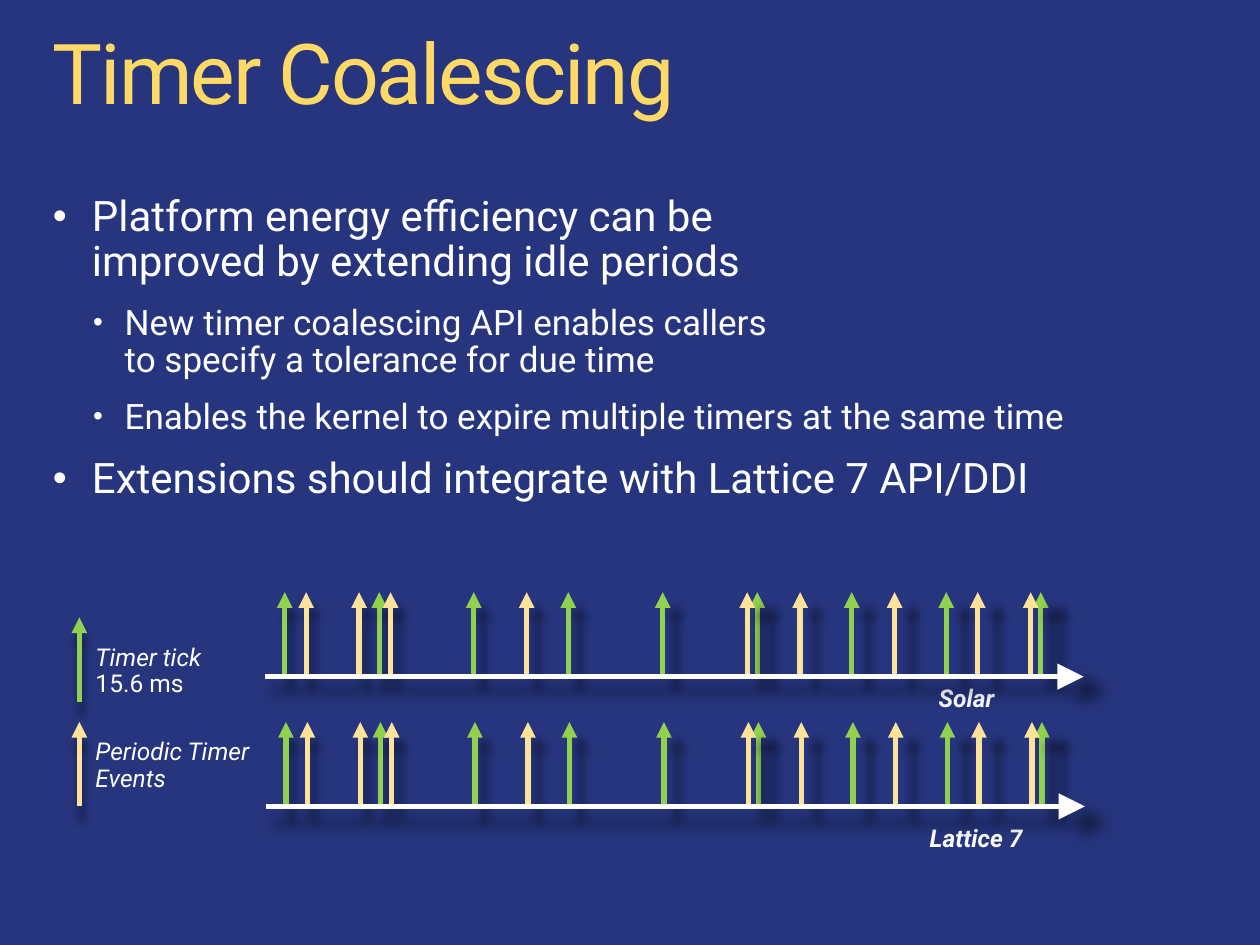
import pptx
import pptx.dml.color
import pptx.enum.shapes
import pptx.enum.text
import pptx.oxml
import pptx.oxml.ns
import pptx.util

Inches = pptx.util.Inches
COLORS = {"ground": "26357E", "title": "FFD966", "text": "FFFFFF",
          "tick": "92D050", "event": "FDE399", "shadow": "000000"}
LABEL = {"size": pptx.util.Pt(14), "italic": True}
SYSTEM = {**LABEL, "bold": True}
LEVELS = [
    {"size": 24, "margin": 0.31, "hang": 0.31, "before": 11.7, "bullet": 95},
    {"size": 20, "margin": 0.57, "hang": 0.25, "before": 10.8, "bullet": 80},
]
POINTS = [
    (0, "Platform energy efficiency can be\vimproved by extending idle periods"),
    (1, "New timer coalescing API enables callers\vto specify a tolerance for due time"),
    (1, "Enables the kernel to expire multiple timers at the same time"),
    (0, "Extensions should integrate with Lattice 7 API/DDI"),
]
AXIS_LENGTH, ARROW_HEIGHT = 6.5, 0.67
TICKS = [0.16 + 0.75 * step for step in range(9)]
EVENTS = [0.33, 0.75, 1, 2.08, 3.83, 4.25, 5, 5.66, 6.08]


def rgb(name):
    """Return the named colour."""
    return pptx.dml.color.RGBColor.from_string(COLORS[name])


def xml(markup):
    """Parse one DrawingML element."""
    tag, rest = markup[1:].split(" ", 1)
    return pptx.oxml.parse_xml(f"<{tag} {pptx.oxml.ns.nsdecls('a')} {rest}")


class TimerSlide:
    """Hold the style and the current slide."""

    def __init__(self, deck, font="Roboto"):
        self.font = font
        self.slide = deck.slides.add_slide(deck.slide_layouts[6])
        self.slide.background.fill.solid()
        self.slide.background.fill.fore_color.rgb = rgb("ground")

    def box(self, left, top, width, height, inset=True):
        """Add a wrapping text frame."""
        area = [Inches(length) for length in (left, top, width, height)]
        frame = self.slide.shapes.add_textbox(*area).text_frame
        frame.word_wrap = True
        frame.vertical_anchor = pptx.enum.text.MSO_ANCHOR.TOP
        if not inset:
            for side in ("left", "top", "right", "bottom"):
                setattr(frame, f"margin_{side}", 0)
        return frame

    def set_text(self, paragraph, text, format, color="text", spacing=0.9):
        """Fill a paragraph and format its runs."""
        paragraph.text = text
        paragraph.line_spacing = spacing
        for run in paragraph.runs:
            for key, value in {"name": self.font, **format}.items():
                setattr(run.font, key, value)
            run.font.color.rgb = rgb(color)

    def title(self, text):
        """Add the tightly spaced heading."""
        heading = self.box(0.42, 0.25, 9.16, 0.73, inset=False).paragraphs[0]
        self.set_text(heading, text, {"size": pptx.util.Pt(48)}, "title")
        heading.runs[0].font._element.set("spc", "-120")

    def bullets(self, points):
        """Add the two-level bullet list."""
        frame = self.box(0.42, 1.55, 9.16, 2.48, inset=False)
        for number, (level, text) in enumerate(points):
            look = LEVELS[level]
            point = frame.add_paragraph() if number else frame.paragraphs[0]
            point.level = level
            props = point._p.get_or_add_pPr()
            props.set("marL", str(Inches(look["margin"])))
            props.set("indent", str(-Inches(look["hang"])))
            for markup in (
                f'<a:buClr ><a:srgbClr val="{COLORS["text"]}"/></a:buClr>',
                f'<a:buSzPct val="{look["bullet"] * 1000}"/>',
                '<a:buFont typeface="Arial"/>',
                '<a:buChar char="•"/>',
            ):
                props.append(xml(markup))
            if number:
                point.space_before = pptx.util.Pt(look["before"])
            self.set_text(point, text, {"size": pptx.util.Pt(look["size"])})

    def label(self, area, lines, spacing=0.9):
        """Add a small label from text and format pairs."""
        frame = self.box(*area)
        for number, (text, format) in enumerate(lines):
            line = frame.add_paragraph() if number else frame.paragraphs[0]
            self.set_text(line, text, format, spacing=spacing)

    def arrow(self, start, end, color, head="med", opacity=40, blur=5):
        """Add a shadowed line with an arrowhead at its end."""
        ends = [Inches(length) for length in (*start, *end)]
        line = self.slide.shapes.add_connector(
            pptx.enum.shapes.MSO_CONNECTOR.STRAIGHT, *ends)
        line.line.color.rgb = rgb(color)
        line.line.width = pptx.util.Pt(3)
        line.line._get_or_add_ln().append(
            xml(f'<a:tailEnd type="triangle" w="{head}" len="{head}"/>'))
        line._element.spPr.append(xml(
            f'<a:effectLst ><a:outerShdw blurRad="{pptx.util.Pt(blur)}" '
            'sx="102000" sy="102000" algn="ctr" rotWithShape="0">'
            f'<a:srgbClr val="{COLORS["shadow"]}"><a:alpha val="{opacity * 1000}"/>'
            '</a:srgbClr></a:outerShdw></a:effectLst>'))

    def upright(self, x, base, color):
        """Add an upward arrow standing on a base line."""
        self.arrow((x, base), (x, base - ARROW_HEIGHT), color)

    def timeline(self, left, base):
        """Add an axis with its timer ticks and events."""
        for color, offsets in (("tick", TICKS), ("event", EVENTS)):
            for offset in offsets:
                self.upright(left + offset, base, color)
        self.arrow((left, base), (left + AXIS_LENGTH, base), "text", "lg", 50, 8)


def main():
    """Build and save the deck."""
    deck = pptx.Presentation()
    deck.slide_width, deck.slide_height = Inches(10), Inches(7.5)
    page = TimerSlide(deck)
    page.title("Timer Coalescing")
    page.bullets(POINTS)
    page.upright(0.63, 5.57, "tick")
    page.upright(0.63, 6.4, "event")
    page.label((0.66, 5.07, 1.43, 0.53),
               [("Timer tick", LABEL), ("15.6 ms", {**LABEL, "italic": False})])
    page.label((0.66, 5.82, 1.43, 0.53), [("Periodic Timer Events", LABEL)])
    page.label((7.28, 6.48, 1.58, 0.34), [("Lattice 7", SYSTEM)], 1)
    page.label((7.35, 5.37, 1.58, 0.34), [("Solar", SYSTEM)], 1)
    page.timeline(2.1, 5.37)
    page.timeline(2.11, 6.4)
    deck.save("out.pptx")


if __name__ == "__main__":
    main()
